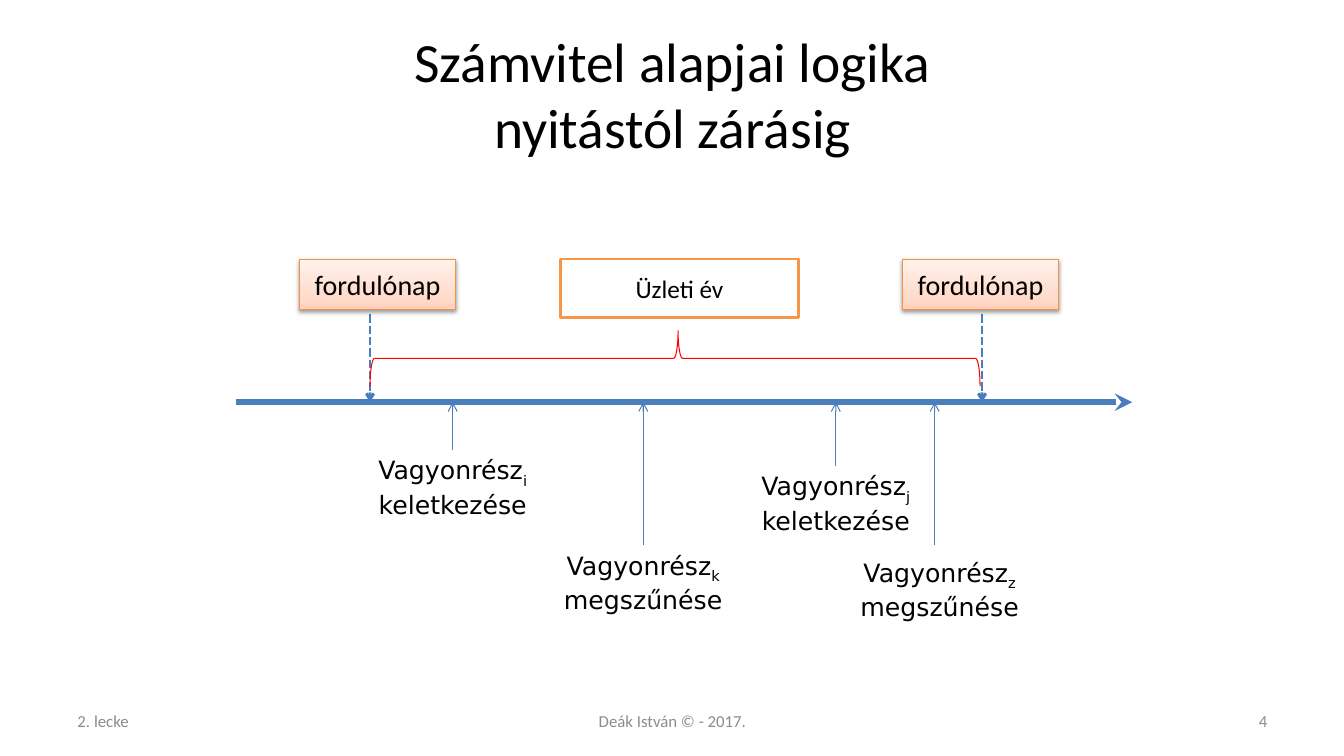
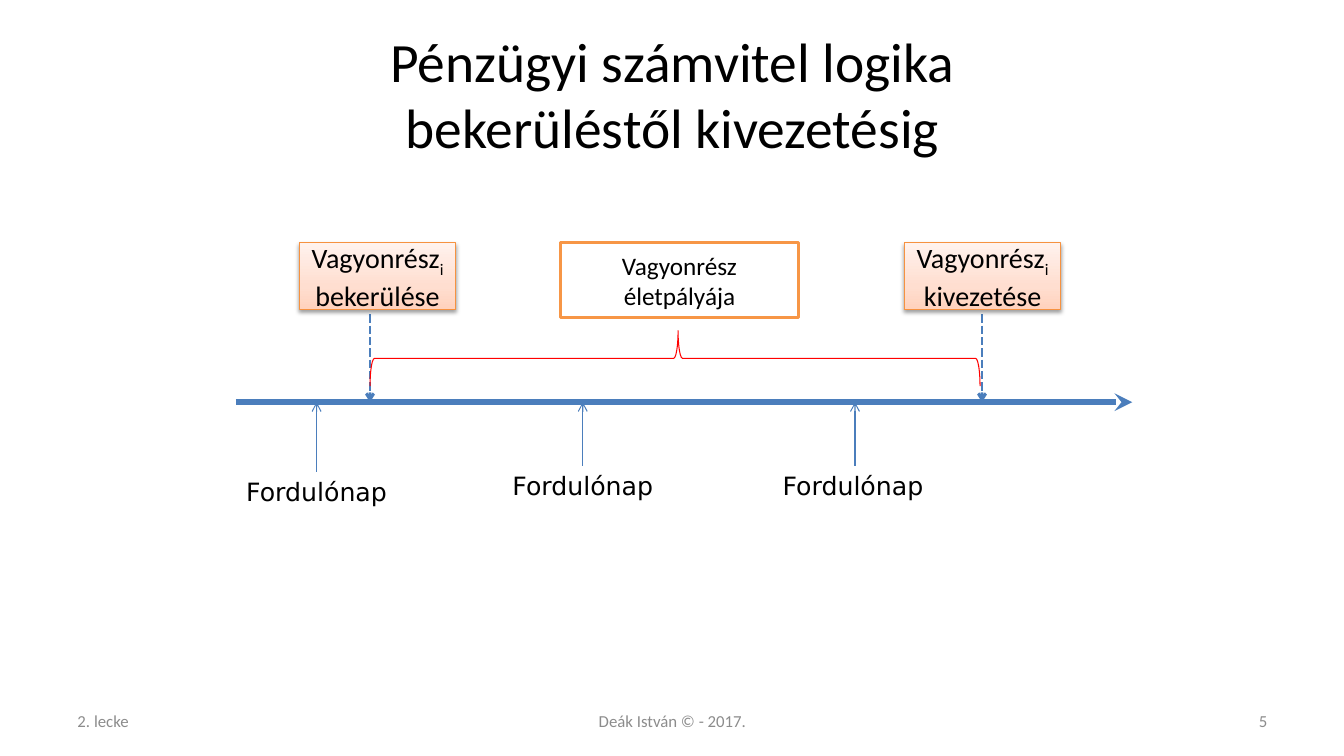
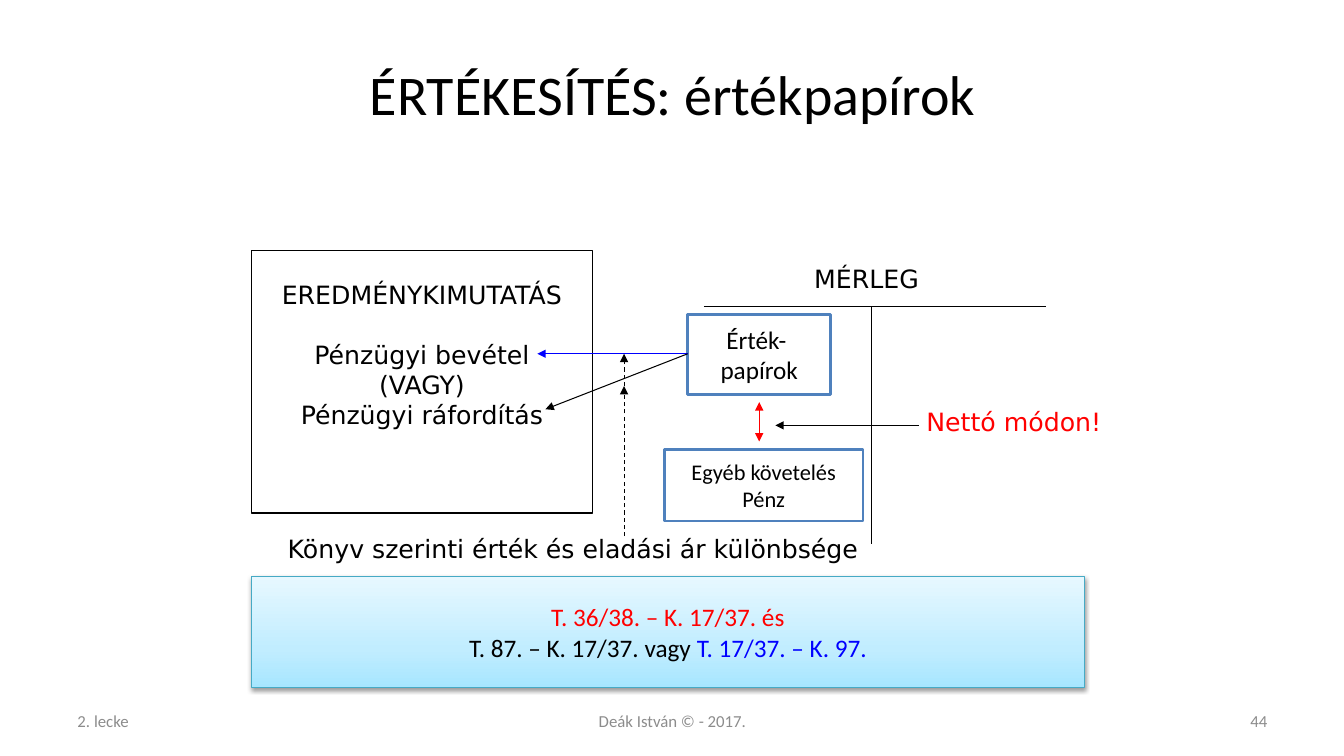
"""Three accounting slides: two timelines and one account diagram."""
from pptx import Presentation
from pptx.dml.color import RGBColor
from pptx.enum.dml import MSO_LINE
from pptx.enum.shapes import MSO_CONNECTOR, MSO_SHAPE
from pptx.enum.text import MSO_ANCHOR, MSO_AUTO_SIZE, PP_ALIGN
from pptx.oxml.ns import qn
from pptx.util import Inches, Pt
from lxml.etree import SubElement

SANS, WIDE = "Calibri", "DejaVu Sans"
BLACK, WHITE, GREY, RED, BLUE = "000000", "FFFFFF", "8C8C8C", "FF0000", "0000FF"
STEEL, ORANGE = "4B7EBC", "F79646"
PEACH = ("FFD2BD", "FFDED0", "FFF2ED")
SKY = ("A7E6FF", "C1EDFF", "E7F8FF")
STOPS = (0, 35, 100)

TITLE_BOX = (0.67, 0.3, 12, 1.25)
AXIS_Y = 3.99
DAY_MARKS = (3.67, 9.74)


def asset(mark):
    """Return the spans of an asset name with a lowered mark."""
    return [("Vagyonrész", {}), (mark, {"lowered": True})]


TIMELINES = [
    {
        "title": "Számvitel alapjai logika\vnyitástól zárásig",
        "number": "4",
        "top": 2.57,
        "cards": [(2.97, ["fordulónap"]), (8.95, ["fordulónap"])],
        "period": "Üzleti év",
        "events": [
            (asset("i"), "keletkezése", 4.49, 4.46, 4.49, 4.46),
            (asset("k"), "megszűnése", 6.38, 5.41, 6.38, 5.41),
            (asset("j"), "keletkezése", 8.29, 4.62, 8.29, 4.62),
            (asset("z"), "megszűnése", 9.27, 5.41, 9.32, 5.48),
        ],
    },
    {
        "title": "Pénzügyi számvitel logika\vbekerüléstől kivezetésig",
        "number": "5",
        "top": 2.41,
        "cards": [(2.97, [asset("i"), "bekerülése"]), (8.97, [asset("i"), "kivezetése"])],
        "period": "Vagyonrész életpályája",
        "events": [
            ("Fordulónap", None, 3.14, 4.68, 3.14, 4.68),
            ("Fordulónap", None, 5.78, 4.62, 5.78, 4.62),
            ("Fordulónap", None, 8.48, 4.62, 8.46, 4.62),
        ],
    },
]

ACCOUNT_BOXES = [
    ((6.82, 3.12, 1.42, 0.79), ["Érték- ", "papírok"], 18),
    ((6.59, 4.46, 1.97, 0.71), ["Egyéb követelés", "Pénz"], 16),
]
ACCOUNT_LABELS = [
    ((7.61, 2.57, 1.97, 0.39), "MÉRLEG", BLACK),
    ((9.03, 3.98, 2.05, 0.4), "Nettó módon!", RED),
    ((2.73, 5.24, 5.91, 0.4), "Könyv szerinti érték és eladási ár különbsége", BLACK),
]
ACCOUNT_LINES = [
    ((6.98, 3.04), (10.37, 3.04), {}),
    ((8.64, 3.04), (8.64, 5.4), {}),
    ((7.53, 4.38), (7.53, 3.99), {"color": RED, "head": "triangle", "tail": "triangle"}),
    ((6.82, 3.51), (5.33, 3.51), {"color": BLUE, "tail": "triangle"}),
    ((6.82, 3.51), (5.41, 4.06), {"tail": "triangle"}),
    ((9.11, 4.22), (7.69, 4.22), {"tail": "triangle"}),
    ((6.19, 5.32), (6.19, 3.83), {"tail": "triangle", "dash": MSO_LINE.DASH}),
    ((6.19, 3.83), (6.19, 3.51), {"tail": "triangle", "dash": MSO_LINE.DASH}),
]
INCOME_LINES = ["EREDMÉNYKIMUTATÁS", "Pénzügyi bevétel", "(VAGY)", "Pénzügyi ráfordítás"]
ENTRIES = [
    [("T. 36/38. – K. 17/37. és", {"color": RED})],
    [("T. 87. – K. 17/37. vagy ", {}), ("T. 17/37. – K. 97.", {"color": BLUE})],
]


def rgb(value):
    """Turn a hex string into a colour."""
    return RGBColor.from_string(value)


def style(span, size, font, color, lowered=False):
    """Format one span."""
    span.font.size, span.font.name = Pt(size), font
    span.font.color.rgb = rgb(color)
    if lowered:
        span.font._element.set("baseline", "-25000")


def write(box, paragraphs, size=18, font=SANS, color=BLACK, align=PP_ALIGN.CENTER,
          anchor=MSO_ANCHOR.MIDDLE, wrap=False, fit=MSO_AUTO_SIZE.NONE):
    """Fill a box with paragraphs, each a string or a list of spans."""
    frame = box.text_frame
    frame.word_wrap, frame.auto_size = wrap, fit
    frame.vertical_anchor = anchor
    for index, content in enumerate(paragraphs):
        para = frame.add_paragraph() if index else frame.paragraphs[0]
        para.alignment = align
        if isinstance(content, str):
            para.text = content
            for span in para.runs:
                style(span, size, font, color)
            continue
        for text, options in content:
            span = para.add_run()
            span.text = text
            style(span, size, font, **{"color": color, **options})
    return frame


def add_text(page, place, paragraphs, **options):
    """Add a text box."""
    box = page.shapes.add_textbox(*map(Inches, place))
    return write(box, paragraphs, **options)


def add_box(page, place, line, width=0.75, fill=None, kind=MSO_SHAPE.RECTANGLE):
    """Add an outlined shape with an optional plain or graded fill."""
    box = page.shapes.add_shape(kind, *map(Inches, place))
    box.shadow.inherit = False
    box.line.color.rgb, box.line.width = rgb(line), Pt(width)
    if fill is None:
        box.fill.background()
    elif isinstance(fill, str):
        box.fill.solid()
        box.fill.fore_color.rgb = rgb(fill)
    else:
        shade(box, fill)
    return box


def shade(box, colors):
    """Give a box an upward gradient and a soft shadow below."""
    box.fill.gradient()
    box.fill.gradient_angle = 90
    properties = box._element.spPr
    stops = properties.find(".//" + qn("a:gsLst"))
    for stop in list(stops):
        stops.remove(stop)
    for position, color in zip(STOPS, colors):
        stop = SubElement(stops, qn("a:gs"), pos=str(position * 1000))
        SubElement(stop, qn("a:srgbClr"), val=color)
    shadow = SubElement(properties.find(qn("a:effectLst")), qn("a:outerShdw"),
                        blurRad=str(Pt(3.1)), dist=str(Pt(1.6)), dir="5400000", rotWithShape="0")
    tint = SubElement(shadow, qn("a:srgbClr"), val=BLACK)
    SubElement(tint, qn("a:alpha"), val="38000")


def add_line(page, start, end, color=BLACK, width=0.75, dash=None, head=None, tail=None):
    """Add a straight line with optional arrowheads."""
    line = page.shapes.add_connector(MSO_CONNECTOR.STRAIGHT, *map(Inches, start + end))
    line.line.color.rgb, line.line.width = rgb(color), Pt(width)
    if dash:
        line.line.dash_style = dash
    properties = line._element.spPr
    outline = properties.find(qn("a:ln"))
    for name, kind in (("a:headEnd", head), ("a:tailEnd", tail)):
        if kind:
            SubElement(outline, qn(name), type=kind)
    SubElement(properties, qn("a:effectLst"))


def add_page(deck, title, number, size=39.6):
    """Add a slide with its title and footer."""
    page = deck.slides.add_slide(deck.slide_layouts[5])
    heading = page.shapes.title
    heading.left, heading.top, heading.width, heading.height = map(Inches, TITLE_BOX)
    write(heading, [title], size=size, wrap=True)
    for left, width, text, align in (
        (0.67, 3.11, "2. lecke", PP_ALIGN.LEFT),
        (4.56, 4.22, "Deák István © - 2017.", PP_ALIGN.CENTER),
        (9.56, 3.11, number, PP_ALIGN.RIGHT),
    ):
        add_text(page, (left, 6.95, width, 0.4), [text], size=12, color=GREY,
                 align=align, wrap=True)
    return page


def add_timeline(deck, content):
    """Build a timeline slide."""
    page = add_page(deck, content["title"], content["number"])
    top = content["top"]
    add_line(page, (2.34, AXIS_Y), (11.23, AXIS_Y), STEEL, 4.25, tail="stealth")
    for mark in DAY_MARKS:
        add_line(page, (mark, 3.12), (mark, AXIS_Y), STEEL, 2, MSO_LINE.SQUARE_DOT, tail="arrow")
    for left, lines in content["cards"]:
        write(add_box(page, (left, top, 1.55, 3.07 - top), "F69240", fill=PEACH), lines, size=20)
    brace = add_box(page, (6.42, 0.53, 0.55, 6.05), RED, kind=MSO_SHAPE.RIGHT_BRACE)
    brace.rotation = 270
    brace.adjustments[0], brace.adjustments[1] = 0.08, 0.505
    period = add_box(page, (5.56, top, 2.36, 3.15 - top), ORANGE, 2, WHITE)
    write(period, [content["period"]], wrap=True)
    for name, change, arrow_x, arrow_y, center, label_top in content["events"]:
        lines = [name, change] if change else [name]
        width, height = (1.77, 0.71) if change else (1.61, 0.4)
        add_text(page, (center - width / 2, label_top, width, height), lines, font=WIDE,
                 anchor=MSO_ANCHOR.TOP, fit=MSO_AUTO_SIZE.SHAPE_TO_FIT_TEXT)
        add_line(page, (arrow_x, arrow_y), (arrow_x, AXIS_Y), STEEL, tail="arrow")


def add_accounts(deck):
    """Build the account diagram slide."""
    page = add_page(deck, "ÉRTÉKESÍTÉS: értékpapírok", "44", size=40)
    income = add_box(page, (2.49, 2.49, 3.39, 2.6), BLACK)
    frame = write(income, INCOME_LINES, font=WIDE, anchor=MSO_ANCHOR.TOP)
    frame.margin_top = Inches(0.28)
    frame.paragraphs[1].space_before = Pt(21)
    for place, lines, size in ACCOUNT_BOXES:
        write(add_box(page, place, "4F81BD", 2, WHITE), lines, size=size)
    write(add_box(page, (2.49, 5.72, 8.27, 1.1), "46AAC5", fill=SKY), ENTRIES)
    for place, text, color in ACCOUNT_LABELS:
        add_text(page, place, [text], font=WIDE, color=color)
    for start, end, options in ACCOUNT_LINES:
        add_line(page, start, end, **options)


def main():
    """Build and save the deck."""
    deck = Presentation()
    deck.slide_width, deck.slide_height = Inches(13.33), Inches(7.5)
    for content in TIMELINES:
        add_timeline(deck, content)
    add_accounts(deck)
    deck.save("out.pptx")


if __name__ == "__main__":
    main()
